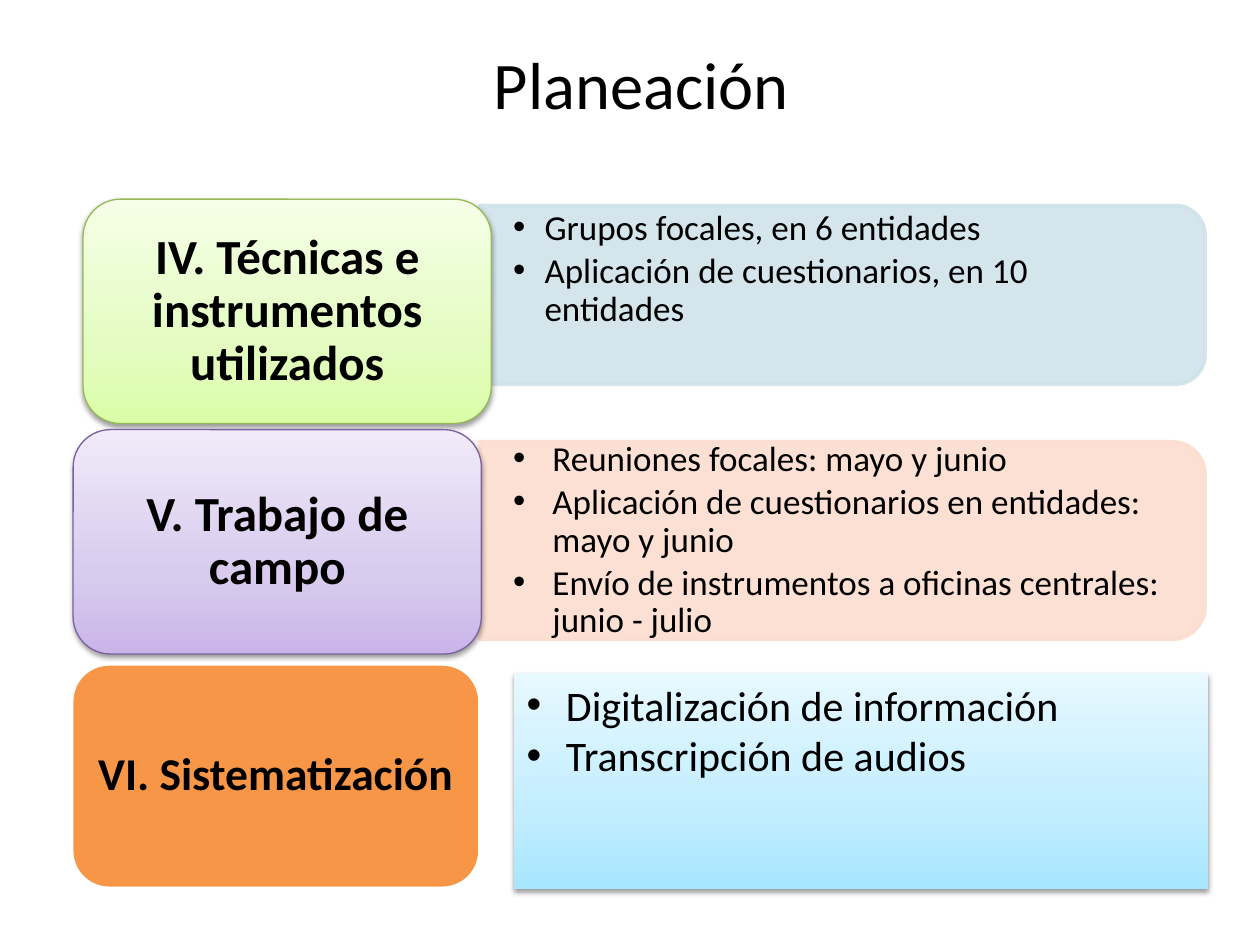
from dataclasses import dataclass

from lxml import etree
from pptx import Presentation
from pptx.dml.color import RGBColor
from pptx.enum import shapes, text
from pptx.oxml import ns
from pptx.util import Pt


@dataclass(frozen=True)
class Theme:
    """Colours, type sizes and font of the slide."""
    font: str = "Calibri"
    ink: str = "000000"
    white: str = "FFFFFF"
    blue_panel: str = "D0E3EA"
    peach_panel: str = "FCDDCF"
    green: tuple = ("DAFDA7", "E4FCC2", "F5FFE7")
    green_line: str = "98B955"
    purple: tuple = ("C9B5E8", "D8CBEE", "F0EAF9")
    purple_line: str = "7D60A0"
    orange: tuple = ("F79646",)
    sky: tuple = ("A7E6FF", "C1EDFF", "E7F8FF")
    title: int = 38
    card: int = 28
    small_card: int = 26
    item: int = 20
    large_item: int = 24


THEME = Theme()
PANEL_LEFT, PANEL_WIDTH = 274, 414.7
CARD_WIDTH, CARD_HEIGHT = 233.3, 128.2


def add_node(parent, tag, **attributes):
    """Append a DrawingML element and return it."""
    node = etree.SubElement(parent, ns.qn(f"a:{tag}"))
    for name, value in attributes.items():
        node.set(name, str(value))
    return node


def place(shape, left, top, width, height):
    """Set the position and size of a shape in points."""
    shape.left, shape.top = Pt(left), Pt(top)
    shape.width, shape.height = Pt(width), Pt(height)


def paint(shape, colours):
    """Fill a shape with one colour or a gradient rising from the bottom."""
    if len(colours) == 1:
        shape.fill.solid()
        shape.fill.fore_color.rgb = RGBColor.from_string(colours[0])
        return
    shape.fill.gradient()
    shape.fill.gradient_angle = 90
    stops = shape._element.spPr.find(".//" + ns.qn("a:gsLst"))
    for stop in list(stops):
        stops.remove(stop)
    for position, colour in zip((0, 35000, 100000), colours):
        add_node(add_node(stops, "gs", pos=position), "srgbClr", val=colour)


def add_shadow(shape):
    """Give a shape a soft shadow below it."""
    effects = shape._element.spPr.find(ns.qn("a:effectLst"))
    shadow = add_node(effects, "outerShdw", blurRad=Pt(3.1), dist=Pt(1.6),
                      dir=5400000, rotWithShape=0)
    colour = add_node(shadow, "srgbClr", val=THEME.ink)
    add_node(colour, "alpha", val=38000)


def add_box(slide, kind, box, colours, line=None, line_width=0.75):
    """Add a filled preset shape."""
    shape = slide.shapes.add_shape(kind, *map(Pt, box))
    shape.shadow.inherit = False
    paint(shape, colours)
    if line:
        shape.line.color.rgb = RGBColor.from_string(line)
        shape.line.width = Pt(line_width)
    else:
        shape.line.fill.background()
    return shape


def set_frame(shape, anchor, horizontal, vertical):
    """Set wrapping, anchor and insets of a shape's text."""
    frame = shape.text_frame
    frame.word_wrap = True
    frame.auto_size = text.MSO_AUTO_SIZE.NONE
    frame.vertical_anchor = anchor
    frame.margin_left = frame.margin_right = Pt(horizontal)
    frame.margin_top = frame.margin_bottom = Pt(vertical)
    return frame


def write(paragraph, words, size, bold=False):
    """Add a run in the theme font."""
    run = paragraph.add_run()
    run.text = words
    run.font.name, run.font.size, run.font.bold = THEME.font, Pt(size), bold
    run.font.color.rgb = RGBColor.from_string(THEME.ink)


def write_bullets(frame, items, size, indent, spacing=1.0, after=0):
    """Fill a text frame with a bulleted list."""
    for index, item in enumerate(items):
        paragraph = frame.add_paragraph() if index else frame.paragraphs[0]
        properties = paragraph._p.get_or_add_pPr()
        properties.set("marL", str(Pt(indent)))
        properties.set("indent", str(-Pt(indent)))
        add_node(properties, "buFont", typeface="Arial")
        add_node(properties, "buChar", char="•")
        paragraph.alignment = text.PP_ALIGN.LEFT
        paragraph.line_spacing = spacing
        paragraph.space_before, paragraph.space_after = Pt(0), Pt(after)
        write(paragraph, item, size)


def add_title(slide, words):
    """Fill the title placeholder."""
    title = slide.shapes.title
    place(title, 42.5, 21, 648, 90)
    frame = set_frame(title, text.MSO_ANCHOR.TOP, 7.2, 3.6)
    frame.paragraphs[0].alignment = text.PP_ALIGN.CENTER
    write(frame.paragraphs[0], words, THEME.title)


def add_panel(slide, top, height, colour):
    """Add a panel rounded on its right side."""
    left = PANEL_LEFT + (PANEL_WIDTH - height) / 2
    upper = top + (height - PANEL_WIDTH) / 2
    panel = add_box(slide, shapes.MSO_SHAPE.ROUND_2_SAME_RECTANGLE,
                    (left, upper, height, PANEL_WIDTH), (colour,), colour, 2)
    panel.rotation = 90
    for node in panel._element.spPr.iter(ns.qn("a:srgbClr")):
        add_node(node, "alpha", val=90000)


def add_list(slide, placeholder, top, height, anchor, indent, items):
    """Bring a body placeholder to the front and fill it with a list."""
    slide.shapes._spTree.append(placeholder._element)
    place(placeholder, PANEL_LEFT, top, 409.5, height)
    frame = set_frame(placeholder, anchor, 19.2, 0)
    write_bullets(frame, items, THEME.item, indent, 0.9, 3)


def add_card(slide, left, top, words, size, colours, line, width=0.75):
    """Add a rounded card with a bold centred label."""
    card = add_box(slide, shapes.MSO_SHAPE.ROUNDED_RECTANGLE,
                   (left, top, CARD_WIDTH, CARD_HEIGHT), colours, line, width)
    frame = set_frame(card, text.MSO_ANCHOR.MIDDLE, 8, 4)
    paragraph = frame.paragraphs[0]
    paragraph.alignment = text.PP_ALIGN.CENTER
    paragraph.line_spacing = 0.9
    write(paragraph, words, size, True)
    return card


def add_list_box(slide, items):
    """Add the gradient box that holds its own list."""
    box = add_box(slide, shapes.MSO_SHAPE.RECTANGLE,
                  (293.8, 384.5, 396.7, 123.8), THEME.sky)
    add_shadow(box)
    frame = set_frame(box, text.MSO_ANCHOR.TOP, 7.2, 3.6)
    write_bullets(frame, items, THEME.large_item, 22.5)


def main():
    """Build and save the planning slide."""
    presentation = Presentation()
    presentation.slide_width, presentation.slide_height = Pt(720), Pt(540)
    slide = presentation.slides.add_slide(presentation.slide_layouts[3])
    techniques, fieldwork = list(slide.placeholders)[1:3]
    add_title(slide, "Planeación")

    add_panel(slide, 117.4, 102.2, THEME.blue_panel)
    add_list(slide, techniques, 120, 94, text.MSO_ANCHOR.TOP, 18, (
        "Grupos focales, en 6 entidades",
        "Aplicación de cuestionarios, en 10 entidades"))
    add_shadow(add_card(slide, 47.5, 113.8, "IV. Técnicas e instrumentos utilizados",
                        THEME.card, THEME.green, THEME.green_line))

    add_panel(slide, 252.4, 113, THEME.peach_panel)
    add_list(slide, fieldwork, 249, 120, text.MSO_ANCHOR.MIDDLE, 22.5, (
        "Reuniones focales: mayo y junio",
        "Aplicación de cuestionarios en entidades: mayo y junio",
        "Envío de instrumentos a oficinas centrales: junio - julio"))
    add_shadow(add_card(slide, 41.8, 245.5, "V. Trabajo de campo",
                        THEME.card, THEME.purple, THEME.purple_line))

    add_card(slide, 41, 379.4, "VI. Sistematización",
             THEME.small_card, THEME.orange, THEME.white, 2)
    add_list_box(slide, ("Digitalización de información", "Transcripción de audios"))
    presentation.save("out.pptx")


if __name__ == "__main__":
    main()
